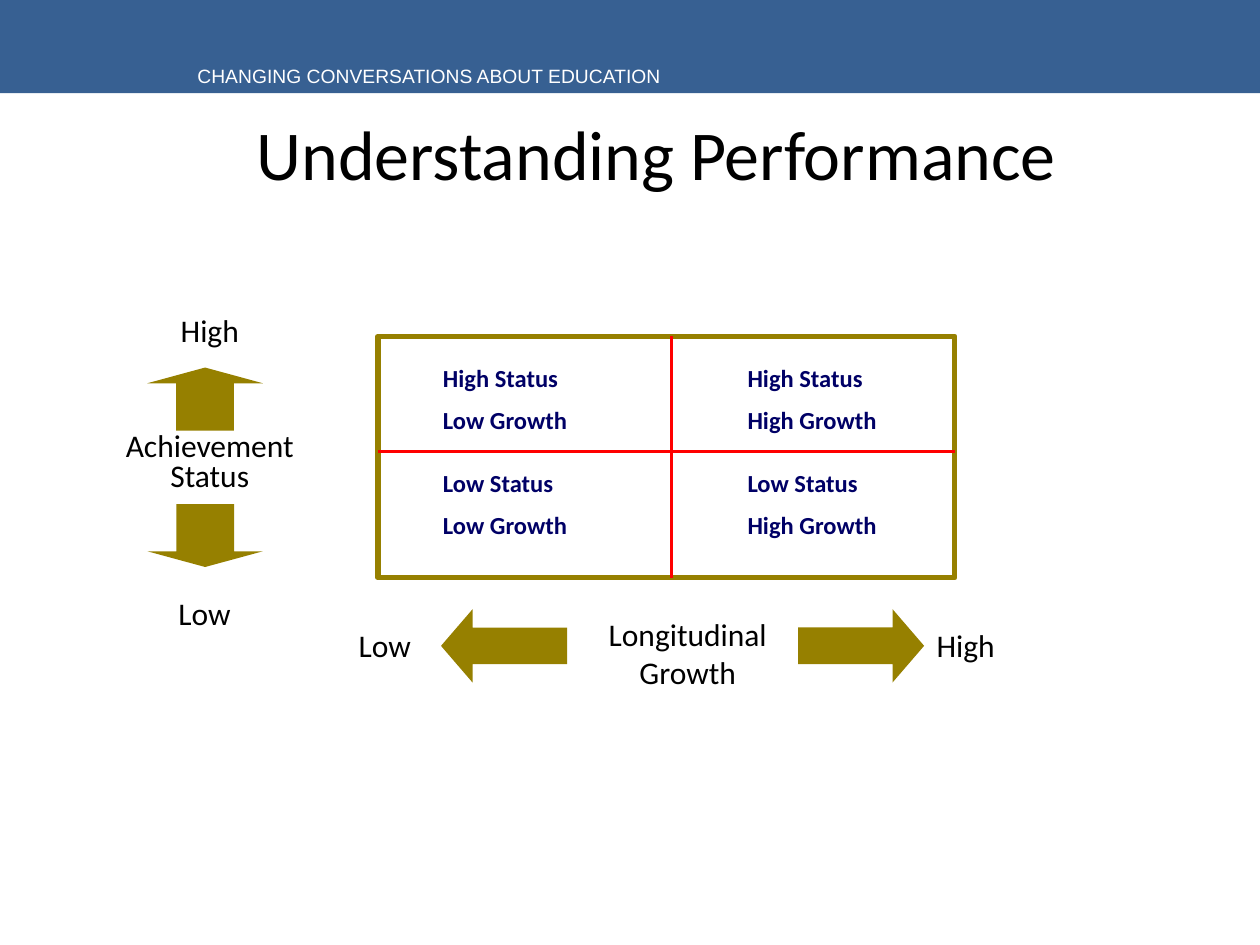
import pptx
import pptx.dml.color
import pptx.enum.shapes
import pptx.enum.text
import pptx.oxml
import pptx.oxml.ns
import pptx.util
from dataclasses import dataclass

Cm = pptx.util.Cm
Pt = pptx.util.Pt
SHAPE = pptx.enum.shapes.MSO_SHAPE
ALIGN = pptx.enum.text.PP_ALIGN


@dataclass(frozen=True)
class Theme:
    band: str = "376092"
    gold: str = "968000"
    red: str = "FF0000"
    navy: str = "000066"
    black: str = "000000"
    white: str = "FFFFFF"
    body_font: str = "Calibri"
    header_font: str = "Arial"
    title_size: int = 40
    label_size: int = 18
    cell_size: int = 14
    header_size: int = 11


THEME = Theme()


def rgb(value):
    return pptx.dml.color.RGBColor.from_string(value)


def write_text(frame, text, *, size=THEME.label_size, color=THEME.black,
               font=THEME.body_font, bold=False, align=ALIGN.LEFT,
               gap=0, last_spacing=None):
    """Fill a text frame, one paragraph for each line of text."""
    frame.word_wrap = True
    frame.vertical_anchor = pptx.enum.text.MSO_ANCHOR.TOP
    for index, line in enumerate(text.split("\n")):
        paragraph = frame.paragraphs[0] if index == 0 else frame.add_paragraph()
        paragraph.alignment = align
        if index:
            paragraph.space_before = Pt(gap)
            paragraph.line_spacing = last_spacing
        run = paragraph.add_run()
        run.text = line
        run.font.name = font
        run.font.size = Pt(size)
        run.font.bold = bold
        run.font.color.rgb = rgb(color)


class SlideBuilder:
    def __init__(self, presentation, theme):
        self.theme = theme
        self.slide = presentation.slides.add_slide(presentation.slide_layouts[5])

    def title(self, text, left, top, width, height):
        shape = self.slide.shapes.title
        shape.left, shape.top = Cm(left), Cm(top)
        shape.width, shape.height = Cm(width), Cm(height)
        write_text(shape.text_frame, text, size=self.theme.title_size,
                   align=ALIGN.CENTER)

    def text(self, text, left, top, width, height, **style):
        shape = self.slide.shapes.add_textbox(
            Cm(left), Cm(top), Cm(width), Cm(height))
        write_text(shape.text_frame, text, **style)

    def box(self, kind, left, top, width, height, fill, outline=None):
        shape = self.slide.shapes.add_shape(
            kind, Cm(left), Cm(top), Cm(width), Cm(height))
        shape.shadow.inherit = False
        shape.fill.solid()
        shape.fill.fore_color.rgb = rgb(fill)
        if outline:
            shape.line.color.rgb = rgb(outline)
            shape.line.width = Pt(3)
        else:
            shape.line.fill.background()
        return shape

    def arrow(self, kind, left, top, width, height, head, rotation):
        shape = self.box(kind, left, top, width, height, self.theme.gold)
        shape.adjustments[0] = 0.5
        shape.adjustments[1] = head
        shape.rotation = rotation

    def line(self, start_x, start_y, end_x, end_y):
        connector = self.slide.shapes.add_connector(
            pptx.enum.shapes.MSO_CONNECTOR.STRAIGHT,
            Cm(start_x), Cm(start_y), Cm(end_x), Cm(end_y))
        connector.line.color.rgb = rgb(self.theme.red)
        connector.line.width = Pt(2)
        properties = connector._element.spPr
        properties.append(pptx.oxml.parse_xml(
            "<a:effectLst %s/>" % pptx.oxml.ns.nsdecls("a")))


def main():
    presentation = pptx.Presentation()
    presentation.slide_width, presentation.slide_height = Cm(25.4), Cm(19.05)
    builder = SlideBuilder(presentation, THEME)

    # Header band and title
    builder.box(SHAPE.RECTANGLE, 0, 0, 25.55, 1.88, THEME.band)
    builder.text("CHANGING CONVERSATIONS ABOUT EDUCATION", 3.73, 1.17, 13.08, 0.74,
                 size=THEME.header_size, font=THEME.header_font, color=THEME.white)
    builder.title("Understanding Performance", 1.7, 2.11, 23.06, 3.18)

    # Matrix frame and its dividers
    left, top, width, height = 7.62, 6.78, 11.63, 4.87
    builder.box(SHAPE.RECTANGLE, left, top, width, height, THEME.white, THEME.gold)
    builder.line(left, 9.1, left + width, 9.1)
    builder.line(13.54, top, 13.54, top + height)

    # Quadrant texts: status by row, growth by column
    for status, cell_top in (("High", 7.2), ("Low", 9.31)):
        for growth, cell_left, cell_width in (("Low", 8.68, 4.45), ("High", 14.82, 3.81)):
            builder.text(f"{status} Status\n{growth} Growth",
                         cell_left, cell_top, cell_width, 1.75,
                         size=THEME.cell_size, color=THEME.navy, bold=True, gap=7)

    # Arrows of the two axes
    for arrow_top, rotation in ((7.41, 0), (10.16, 180)):
        builder.arrow(SHAPE.UP_ARROW, 2.97, arrow_top, 2.33, 1.27, 0.25, rotation)
    for arrow_left, rotation in ((16.09, 0), (8.89, 180)):
        builder.arrow(SHAPE.RIGHT_ARROW, arrow_left, 12.28, 2.54, 1.48, 0.43, rotation)

    # Vertical axis labels
    builder.text("Achievement\nStatus", 0.42, 8.46, 7.62, 1.68,
                 align=ALIGN.CENTER, last_spacing=0.8)
    builder.text("High", 2.75, 6.15, 2.96, 1.02, align=ALIGN.CENTER)
    builder.text("Low", 2.96, 11.86, 2.33, 1.02, align=ALIGN.CENTER)

    # Horizontal axis labels
    builder.text("Longitudinal Growth", 11.64, 12.28, 4.45, 1.8, align=ALIGN.CENTER)
    builder.text("Low", 6.98, 12.49, 1.91, 1.02)
    builder.text("High", 18.63, 12.49, 2.33, 1.02)

    presentation.save("out.pptx")


if __name__ == "__main__":
    main()
